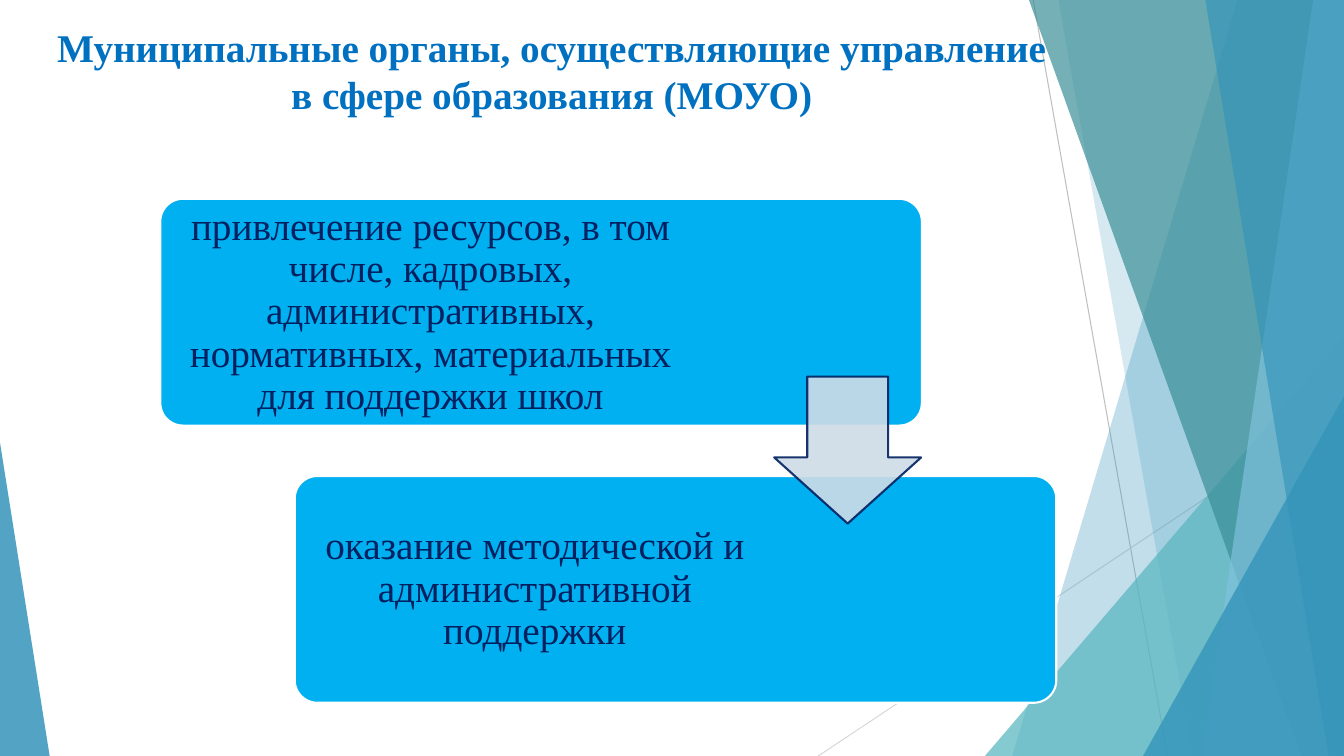
from lxml import etree
from pptx import Presentation
from pptx import util as u
from pptx.dml.color import RGBColor
from pptx.enum import shapes, text
from pptx.oxml.ns import qn

# Content (lengths in points)
W, H = 960, 540
FONT, SIZE = "Times New Roman", 28
TITLE = "Муниципальные органы, осуществляющие управление в сфере образования (МОУО)"
TASKS = [  # text, text width
    ("привлечение ресурсов, в том числе, кадровых, административных, "
     "нормативных, материальных для поддержки школ", 376.5),
    ("оказание методической и административной поддержки", 333.5),
]

# Decor: thin lines, then facets from back to front
LINES = [((738, 0), (834, H), "BFBFBF"), ((W, 290), (584.5, H), "D9D9D9")]
BAND, TRIANGLE = "band", "triangle"
FACETS = [  # band: top x, bottom x; triangle: left, top, width, apex
    (BAND, (884, 723), "3494BA", 30),
    (BAND, (756, 852), "3494BA", 20),
    (TRIANGLE, (703.5, 240, 256.5, 1), "58B6C0", 72),
    (BAND, (735, 929.5), "3A8F98", 70),
    (BAND, (938, 858.5), "7FC1DB", 70),
    (BAND, (861, 949), "3494BA", 65),
    (TRIANGLE, (816.5, 283, 143.5, 1), "3494BA", 80),
    (TRIANGLE, (0, 316, 35.5, 0), "3494BA", 85),
]

# Cascade of task cards
CARD_X, CARD_Y, CARD_W, CARD_H = 114.5, 142, 544, 162
STEP_X, STEP_Y = 96, 198
TEXT_PAD = 4.75
ARROW = 105


def rgb(value):
    return RGBColor.from_string(value)


def set_alpha(fill, percent):
    color = fill._xPr.find(qn("a:solidFill"))[0]
    etree.SubElement(color, qn("a:alpha")).set("val", str(percent * 1000))


def paint(sp, color, alpha=100, line=None):
    sp.shadow.inherit = False
    sp.fill.solid()
    sp.fill.fore_color.rgb = rgb(color)
    if alpha < 100:
        set_alpha(sp.fill, alpha)
    if line:
        sp.line.color.rgb = rgb(line)
        sp.line.width = u.Pt(1.5)
    else:
        sp.line.fill.background()


def add_preset(kind, x, y, w, h, *adjustments):
    sp = slide.shapes.add_shape(kind, u.Pt(x), u.Pt(y), u.Pt(w), u.Pt(h))
    for i, value in enumerate(adjustments):
        sp.adjustments[i] = value
    return sp


def write(tf, content, color, bold=False):
    tf.word_wrap = True
    tf.auto_size = text.MSO_AUTO_SIZE.NONE
    p = tf.paragraphs[0]
    p.text = content
    p.alignment = text.PP_ALIGN.CENTER
    p.font.name, p.font.size, p.font.bold = FONT, u.Pt(SIZE), bold
    p.font.color.rgb = rgb(color)
    return p


prs = Presentation()
prs.slide_width, prs.slide_height = u.Pt(W), u.Pt(H)
slide = prs.slides.add_slide(prs.slide_layouts[5])

# Background lines
for start, end, color in LINES:
    line = slide.shapes.add_connector(
        shapes.MSO_CONNECTOR.STRAIGHT, *map(u.Pt, start + end))
    line.line.color.rgb = rgb(color)
    line.line.width = u.Pt(0.75)
    etree.SubElement(line._element.spPr, qn("a:effectLst"))

# Background facets
for kind, geometry, color, alpha in FACETS:
    if kind == BAND:
        top, bottom = geometry
        corners = [(u.Pt(x), u.Pt(y)) for x, y in
                   ((top, 0), (W, 0), (W, H), (bottom, H))]
        builder = slide.shapes.build_freeform(*corners[0])
        builder.add_line_segments(corners[1:], close=True)
        sp = builder.convert_to_shape()
    else:
        x, y, w, apex = geometry
        sp = add_preset(shapes.MSO_SHAPE.ISOSCELES_TRIANGLE, x, y, w, H - y, apex)
    paint(sp, color, alpha)

# Title, raised above the facets
title = slide.shapes.title
title.left, title.top = u.Pt(33), u.Pt(13)
title.width, title.height = u.Pt(722), u.Pt(75)
title.text_frame.vertical_anchor = text.MSO_ANCHOR.TOP
write(title.text_frame, TITLE, "0070C0", bold=True)
slide.shapes._spTree.append(title._element)

# Task cards with their text
for i, (task, text_w) in enumerate(TASKS):
    x, y = CARD_X + i * STEP_X, CARD_Y + i * STEP_Y
    card = add_preset(shapes.MSO_SHAPE.ROUNDED_RECTANGLE, x, y, CARD_W, CARD_H, 0.1)
    paint(card, "00B0F0", line="FFFFFF")
    box = slide.shapes.add_textbox(
        u.Pt(x + TEXT_PAD), u.Pt(y + TEXT_PAD),
        u.Pt(text_w), u.Pt(CARD_H - 2 * TEXT_PAD))
    tf = box.text_frame
    tf.margin_left = tf.margin_right = tf.margin_top = tf.margin_bottom = u.Pt(8.5)
    tf.vertical_anchor = text.MSO_ANCHOR.MIDDLE
    write(tf, task, "002060").line_spacing = 0.9

# Arrow between the cards
arrow = add_preset(shapes.MSO_SHAPE.DOWN_ARROW, 553, 269, ARROW, ARROW)
arrow.adjustments[0], arrow.adjustments[1] = 0.55, 0.45
paint(arrow, "CEDCE7", 90, line="002060")
set_alpha(arrow.line.fill, 90)

prs.save("out.pptx")
